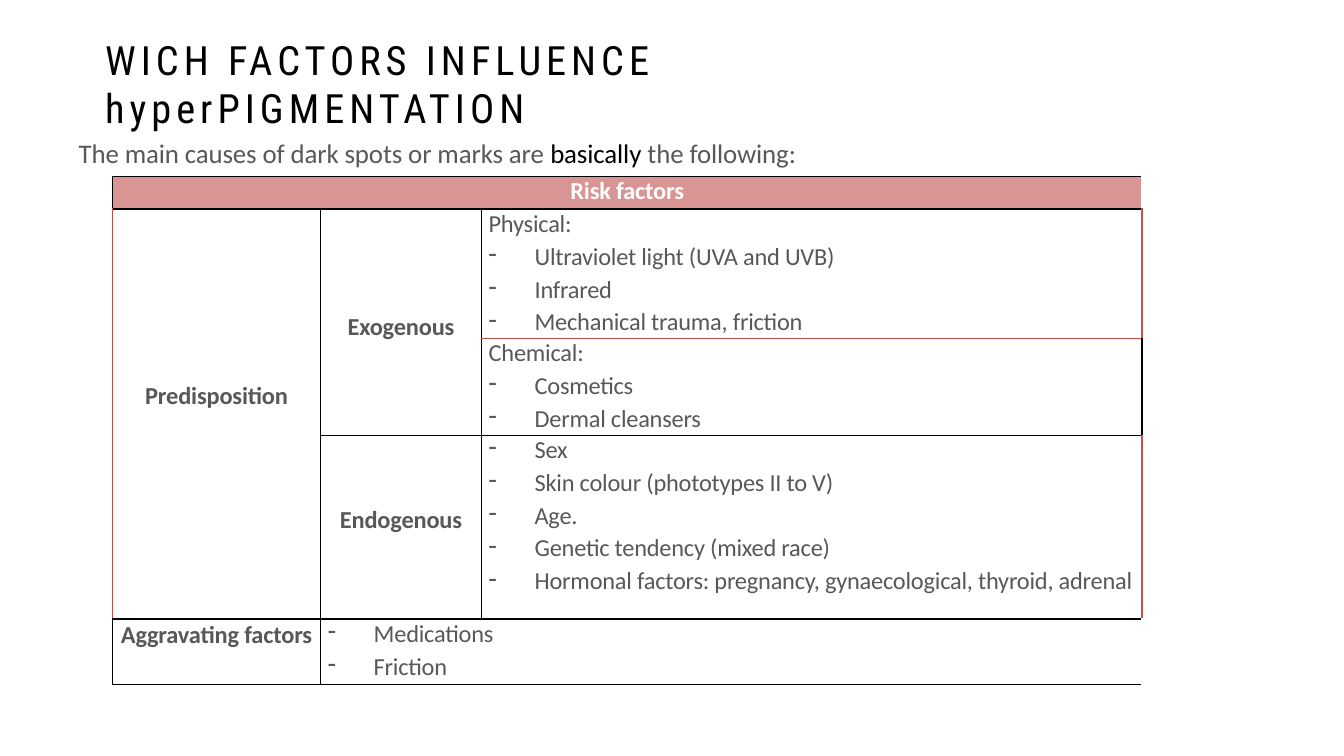
from lxml import etree
from pptx import Presentation
from pptx.dml.color import RGBColor
from pptx.enum.shapes import MSO_SHAPE
from pptx.enum.text import MSO_ANCHOR as Anchor, PP_ALIGN as Align
from pptx.oxml.ns import qn
from pptx.util import Inches, Pt

BLACK, GREY, WHITE, RED, PINK = "000000", "585858", "FFFFFF", "C0504D", "D99593"

TITLE = "WICH FACTORS INFLUENCE hyperPIGMENTATION"
INTRO = [
    ("The main causes of dark spots or marks are ", GREY),
    ("basically ", BLACK),
    ("the following:", GREY),
]
COLUMNS = [1.72, 1.33, 5.46]
ROWS = [0.27, 1.07, 0.8, 1.52, 0.54]

# row, column, row span, column span, text, top margin, bottom margin, anchor
HEADINGS = [
    (0, 0, 1, 3, "Risk factors", 0, 0, Anchor.TOP),
    (1, 0, 3, 1, "Predisposition", 0, 0.3, Anchor.MIDDLE),
    (1, 1, 2, 1, "Exogenous", 0.08, 0, Anchor.MIDDLE),
    (3, 1, 1, 1, "Endogenous", 0, 0.12, Anchor.MIDDLE),
    (4, 0, 1, 1, "Aggravating factors", 0.01, 0, Anchor.TOP),
]
# row, column, row span, column span, label, listed factors
FACTORS = [
    (1, 2, 1, 1, "Physical:",
     ["Ultraviolet light (UVA and UVB)", "Infrared", "Mechanical trauma, friction"]),
    (2, 2, 1, 1, "Chemical:", ["Cosmetics", "Dermal cleansers"]),
    (3, 2, 1, 1, None,
     ["Sex", "Skin colour (phototypes II to V)", "Age.", "Genetic tendency (mixed race)",
      "Hormonal factors: pregnancy, gynaecological, thyroid, adrenal"]),
    (4, 1, 1, 2, None, ["Medications", "Friction"]),
]
# row, column, side
RED_EDGES = {(1, 0, "L"), (2, 0, "L"), (3, 0, "L"), (1, 2, "R"), (3, 2, "R"),
             (1, 2, "B"), (2, 2, "T")}


def rgb(color):
    return RGBColor.from_string(color)


def set_font(font, size, color, name="Calibri", bold=False):
    font.size, font.name, font.bold = Pt(size), name, bold
    font.color.rgb = rgb(color)


def add_run(paragraph, text, spacing):
    """Add a run with letter spacing in points."""
    run = paragraph.add_run()
    run.text = text
    run.font._element.set("spc", str(round(spacing * 100)))
    return run


def set_margins(part, left=0, top=0, bottom=0):
    part.margin_left, part.margin_top = Inches(left), Inches(top)
    part.margin_right, part.margin_bottom = 0, Inches(bottom)


def add_dash(paragraph):
    properties = paragraph._p.get_or_add_pPr()
    properties.set("marL", str(Inches(0.38)))
    properties.set("indent", str(-Inches(0.38)))
    etree.SubElement(properties, qn("a:buChar")).set("char", "-")


def add_border(cell, side, color):
    line = etree.SubElement(cell._tc.get_or_add_tcPr(), qn("a:ln" + side), w=str(Pt(1)))
    fill = etree.SubElement(line, qn("a:solidFill"))
    etree.SubElement(fill, qn("a:srgbClr")).set("val", color)


def merged_cell(table, row, column, row_span, column_span):
    """Merge a block, border its outer edges and return its first cell."""
    last_row, last_column = row + row_span - 1, column + column_span - 1
    first = table.cell(row, column)
    if row_span * column_span > 1:
        first.merge(table.cell(last_row, last_column))
    for r in range(row, last_row + 1):
        for c in range(column, last_column + 1):
            cell = table.cell(r, c)
            outer = {"L": c == column, "R": c == last_column,
                     "T": r == row, "B": r == last_row}
            for side, drawn in outer.items():
                if drawn:
                    add_border(cell, side, RED if (r, c, side) in RED_EDGES else BLACK)
            cell.fill.background()
    return first


def add_intro(slide):
    box = slide.shapes.add_textbox(Inches(0.64), Inches(1.11), Inches(9.08), Inches(0.28))
    frame = box.text_frame
    frame.word_wrap = True
    set_margins(frame, left=0.01, top=0.02)
    for text, color in INTRO:
        set_font(add_run(frame.paragraphs[0], text, -0.05).font, 16, color)


def add_risk_table(slide):
    frame = slide.shapes.add_table(len(ROWS), len(COLUMNS), Inches(0.93), Inches(1.46),
                                   Inches(sum(COLUMNS)), Inches(sum(ROWS)))
    table = frame.table
    table.first_row = table.horz_banding = False
    for column, width in zip(table.columns, COLUMNS):
        column.width = Inches(width)
    for row, height in zip(table.rows, ROWS):
        row.height = Inches(height)

    for *block, text, top, bottom, anchor in HEADINGS:
        cell = merged_cell(table, *block)
        set_margins(cell, top=top, bottom=bottom)
        cell.vertical_anchor = anchor
        is_header = block[0] == 0
        if is_header:
            cell.fill.solid()
            cell.fill.fore_color.rgb = rgb(PINK)
        paragraph = cell.text_frame.paragraphs[0]
        paragraph.alignment = Align.CENTER
        add_run(paragraph, text, -0.1)
        set_font(paragraph.font, 14.5, WHITE if is_header else GREY, bold=True)

    for *block, label, factors in FACTORS:
        cell = merged_cell(table, *block)
        set_margins(cell, left=0.06)
        lines = [label] + factors if label else factors
        for index, text in enumerate(lines):
            text_frame = cell.text_frame
            paragraph = text_frame.add_paragraph() if index else text_frame.paragraphs[0]
            if index:
                paragraph.space_before = Pt(1.9)
            if text != label:
                add_dash(paragraph)
            add_run(paragraph, text, -0.13)
            set_font(paragraph.font, 14.5, GREY)


def add_title(slide):
    title = slide.shapes.add_shape(MSO_SHAPE.RECTANGLE, Inches(0.86), Inches(0.47),
                                   Inches(6.53), Inches(0.42))
    title.shadow.inherit = False
    title.fill.solid()
    title.fill.fore_color.rgb = rgb(WHITE)
    title.line.fill.background()
    frame = title.text_frame
    frame.word_wrap = True
    frame.vertical_anchor = Anchor.MIDDLE
    set_margins(frame, left=0.01, top=0.02)
    paragraph = frame.paragraphs[0]
    paragraph.alignment = Align.LEFT
    add_run(paragraph, TITLE, 3)
    set_font(paragraph.font, 24, BLACK, "Roboto Condensed")


def main():
    deck = Presentation()
    deck.slide_width, deck.slide_height = Inches(11.11), Inches(6.25)
    slide = deck.slides.add_slide(deck.slide_layouts[6])
    add_intro(slide)
    add_risk_table(slide)
    add_title(slide)
    deck.save("out.pptx")


if __name__ == "__main__":
    main()
